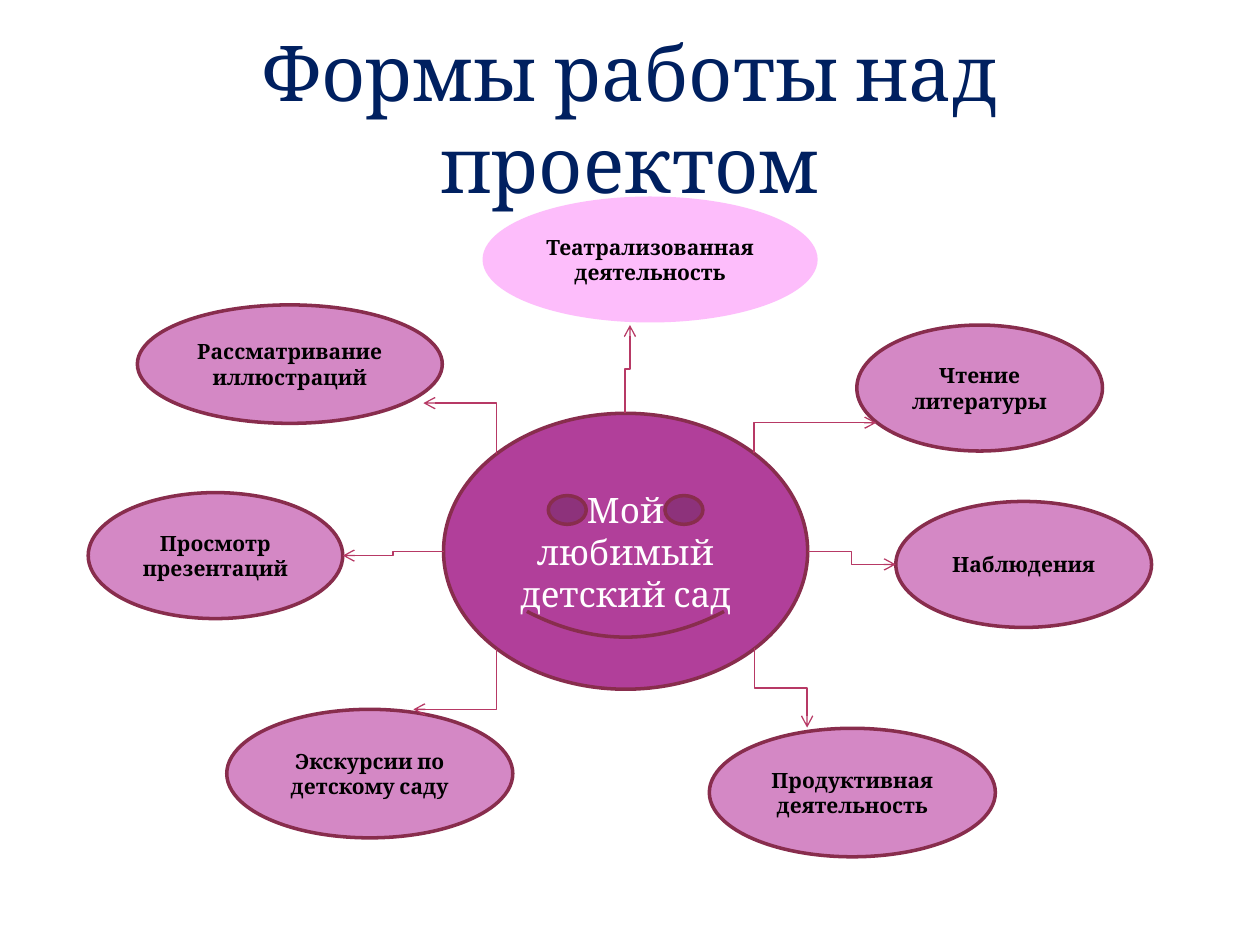
from lxml import etree
from pptx import Presentation
from pptx.dml.color import RGBColor
from pptx.enum.shapes import MSO_CONNECTOR, MSO_SHAPE
from pptx.enum.text import MSO_ANCHOR, PP_ALIGN
from pptx.oxml.ns import qn
from pptx.util import Inches, Pt

ELLIPSE = MSO_SHAPE.OVAL
SMILEY = MSO_SHAPE.SMILEY_FACE
ELBOW = MSO_CONNECTOR.ELBOW
MIDDLE = MSO_ANCHOR.MIDDLE
CENTER = PP_ALIGN.CENTER

NAVY = RGBColor(0x00, 0x20, 0x60)
PINK = RGBColor(0xD4, 0x88, 0xC5)
LIGHT_PINK = RGBColor(0xFD, 0xBD, 0xFB)
PURPLE = RGBColor(0xB1, 0x3F, 0x9A)
MAROON = RGBColor(0x88, 0x2D, 0x4D)
CRIMSON = RGBColor(0xB7, 0x39, 0x65)
BLACK = RGBColor(0x00, 0x00, 0x00)
WHITE = RGBColor(0xFF, 0xFF, 0xFF)
FONT = "Cambria"


def write_text(shape, text, size, color, bold=False):
    text_frame = shape.text_frame
    text_frame.word_wrap = True
    text_frame.vertical_anchor = MIDDLE
    text_frame.text = text
    paragraph = text_frame.paragraphs[0]
    paragraph.alignment = CENTER
    font = paragraph.runs[0].font
    font.name, font.size, font.bold = FONT, Pt(size), bold
    font.color.rgb = color


def add_bubble(kind, box, fill):
    shape = slide.shapes.add_shape(kind, *map(Inches, box))
    shape.shadow.inherit = False
    shape.fill.solid()
    shape.fill.fore_color.rgb = fill
    shape.line.color.rgb = MAROON
    shape.line.width = Pt(2)
    return shape


presentation = Presentation()
presentation.slide_width = Inches(10)
presentation.slide_height = Inches(7.5)
slide = presentation.slides.add_slide(presentation.slide_layouts[6])

# Title
title = slide.shapes.add_textbox(Inches(0.5), Inches(0.3), Inches(9), Inches(1.25))
write_text(title, "Формы работы над проектом", 44, NAVY)

# Highlighted form of work, without an outline
theatre = add_bubble(ELLIPSE, (3.83, 1.56, 2.66, 1), LIGHT_PINK)
theatre.line.fill.background()
write_text(theatre, "Театрализованная деятельность", 12, BLACK, bold=True)

# Other forms of work
activities = [
    ("Рассматривание иллюстраций", (1.09, 2.42, 2.42, 0.94)),
    ("Просмотр презентаций", (0.7, 3.91, 2.02, 1)),
    ("Экскурсии по детскому саду", (1.8, 5.63, 2.27, 1.02)),
    ("Чтение литературы", (6.8, 2.58, 1.95, 1)),
    ("Наблюдения", (7.11, 3.98, 2.03, 1)),
    ("Продуктивная деятельность", (5.63, 5.78, 2.27, 1.02)),
]
for text, box in activities:
    write_text(add_bubble(ELLIPSE, box, PINK), text, 12, BLACK, bold=True)

# Project name in the centre
project = add_bubble(SMILEY, (3.52, 3.28, 2.89, 2.19), PURPLE)
write_text(project, "Мой любимый детский сад", 20, WHITE)

# Elbow arrows: begin and end before rotation, rotation, preset
arrows = [
    ((5.33, 2.95), (4.63, 2.91), 90, "bentConnector3"),
    ((6.35, 2.99), (6.59, 3.96), 270, "bentConnector2"),
    ((6.41, 4.38), (7.11, 4.48), 0, "bentConnector3"),
    ((6.51, 5.25), (5.88, 5.67), 270, "bentConnector3"),
    ((3.37, 5.06), (3.85, 5.72), 90, "bentConnector2"),
    ((2.72, 4.41), (3.52, 4.38), 180, "bentConnector3"),
    ((3.45, 3.69), (3.85, 3.11), 270, "bentConnector2"),
]
for begin, end, rotation, preset in arrows:
    arrow = slide.shapes.add_connector(ELBOW, *map(Inches, begin + end))
    arrow.line.color.rgb = CRIMSON
    arrow.line.width = Pt(0.75)
    properties = arrow._element.spPr
    properties.find(qn("a:xfrm")).set("rot", str(rotation * 60000))
    properties.find(qn("a:prstGeom")).set("prst", preset)
    etree.SubElement(properties.find(qn("a:ln")), qn("a:tailEnd"), type="arrow")
    etree.SubElement(properties, qn("a:effectLst"))

presentation.save("out.pptx")
